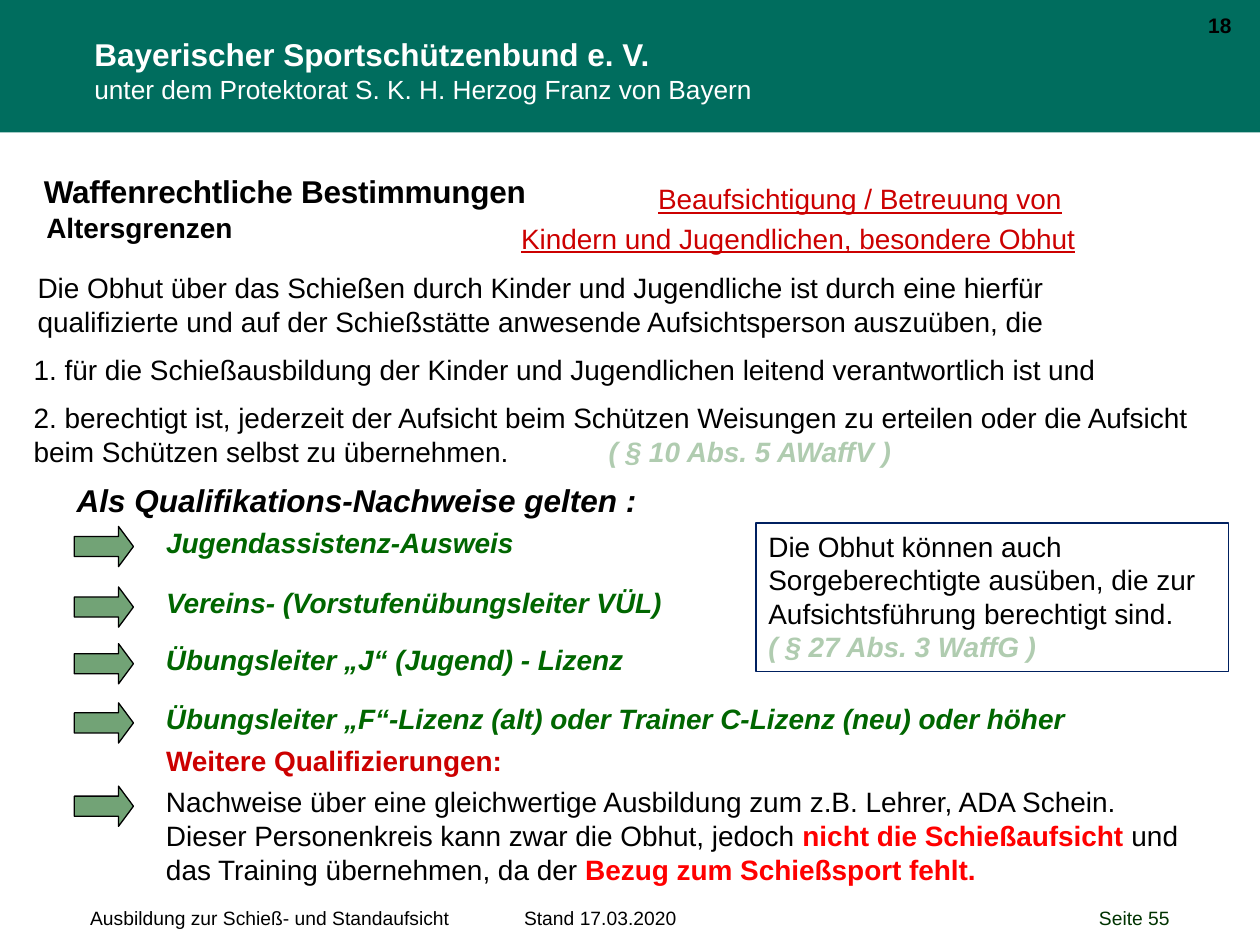
from dataclasses import dataclass
from typing import Any, Optional

import pptx
import pptx.dml.color
import pptx.enum.shapes
import pptx.enum.text
import pptx.oxml
import pptx.oxml.ns
import pptx.util

Pt = pptx.util.Pt
Kind = pptx.enum.shapes.MSO_SHAPE
Align = pptx.enum.text.PP_ALIGN
Anchor = pptx.enum.text.MSO_ANCHOR


@dataclass(frozen=True)
class Theme:
    font: str = "Arial"
    band: str = "006D5E"
    white: str = "FFFFFF"
    black: str = "000000"
    green: str = "006600"
    dark: str = "003300"
    pale: str = "B0CCB0"
    arrow: str = "72A376"
    red: str = "CC0000"
    alert: str = "FF0000"
    navy: str = "002060"
    head: float = 18
    body: float = 16
    sub: float = 15
    page: float = 12
    foot: float = 11


T = Theme()


@dataclass(frozen=True)
class Box:
    left: float
    top: float
    width: float
    height: float

    def points(self) -> list[int]:
        return [Pt(v) for v in (self.left, self.top, self.width, self.height)]


@dataclass(frozen=True)
class Run:
    text: str
    size: float = T.body
    color: str = T.black
    bold: bool = False
    italic: bool = False
    under: bool = False
    track: float = 0


@dataclass(frozen=True)
class Para:
    runs: list[Run]
    indent: float = 0
    before: float = 0
    tabs: tuple[float, ...] = ()


@dataclass(frozen=True)
class Item:
    top: float
    width: float
    height: float
    paras: list[Para]


def rgb(code: str) -> pptx.dml.color.RGBColor:
    return pptx.dml.color.RGBColor.from_string(code)


def shape(host: Any, kind: Any, box: Box, fill: Optional[str] = None,
          line: Optional[str] = None) -> Any:
    item = host.add_shape(kind, *box.points())
    item.shadow.inherit = False
    if fill:
        item.fill.solid()
        item.fill.fore_color.rgb = rgb(fill)
    else:
        item.fill.background()
    if line:
        item.line.color.rgb = rgb(line)
        item.line.width = Pt(0.75)
    else:
        item.line.fill.background()
    return item


def write(item: Any, paras: list[Para], *, align: Any = Align.LEFT,
          anchor: Any = Anchor.TOP, inset: float = 7.2) -> None:
    frame = item.text_frame
    frame.word_wrap = True
    frame.vertical_anchor = anchor
    frame.margin_left = Pt(inset)
    for i, para in enumerate(paras):
        p = frame.add_paragraph() if i else frame.paragraphs[0]
        props = p._p.get_or_add_pPr()
        if para.indent:
            props.set("marL", str(Pt(para.indent)))
        if para.tabs:
            stops = pptx.oxml.parse_xml(
                f'<a:tabLst {pptx.oxml.ns.nsdecls("a")}/>')
            for stop in para.tabs:
                stops.append(pptx.oxml.parse_xml(
                    f'<a:tab {pptx.oxml.ns.nsdecls("a")} '
                    f'pos="{Pt(stop)}" algn="l"/>'))
            props.append(stops)
        p.alignment = align
        if para.before:
            p.space_before = Pt(para.before)
        for run in para.runs:
            r = p.add_run()
            r.text = run.text
            font = r.font
            font.name, font.size = T.font, Pt(run.size)
            font.bold, font.italic = run.bold, run.italic
            font.underline = run.under
            font.color.rgb = rgb(run.color)
            if run.track:
                r._r.get_or_add_rPr().set("spc", str(round(run.track * 100)))


def text(host: Any, box: Box, paras: list[Para], **form: Any) -> None:
    write(host.add_textbox(*box.points()), paras, **form)


def bullet(host: Any, item: Item) -> None:
    group = host.add_group_shape().shapes
    arrow = shape(group, Kind.RIGHT_ARROW, Box(42.5, item.top + 4.2, 33.8, 23),
                  T.arrow, T.black)
    arrow.adjustments[1] = 0.37
    text(group, Box(87.8, item.top, item.width, item.height), item.paras)


def proof(label: str) -> list[Para]:
    return [Para([Run(label, color=T.green, bold=True, italic=True)])]


def law(label: str) -> Run:
    return Run(label, color=T.pale, bold=True, italic=True)


def main() -> None:
    deck = pptx.Presentation()
    deck.slide_width, deck.slide_height = Pt(720), Pt(540)
    host = deck.slides.add_slide(deck.slide_layouts[6]).shapes

    # Footer and header band
    text(host, Box(0, 514.1, 720, 20.9), [Para([
        Run("Ausbildung zur Schieß- und Standaufsicht\tStand 17.03.2020", T.foot),
        Run("\tSeite 55", T.foot, T.dark)], tabs=(248, 576.5))], inset=51.5)
    shape(host, Kind.RECTANGLE, Box(0, 0, 720, 75.6), T.band)
    text(host, Box(46.8, 16.6, 483.8, 47.5), [
        Para([Run("Bayerischer Sportschützenbund e. V.", T.head, T.white, True)]),
        Para([Run("unter dem Protektorat S. K. H. Herzog Franz von Bayern",
                  T.sub, T.white)])])
    text(host, Box(683.3, 3.6, 33.8, 21.6),
         [Para([Run("18", T.page, bold=True)])])

    # Title and topic
    text(host, Box(18, 95, 295.9, 48.2), [
        Para([Run("Waffenrechtliche Bestimmungen", T.head, bold=True, track=-0.15)]),
        Para([Run("Altersgrenzen", bold=True)], indent=1.4)])
    text(host, Box(277.9, 88.6, 356.4, 60.5), [
        Para([Run("Beaufsichtigung / Betreuung von", color=T.red, under=True)],
             indent=70.5),
        Para([Run("Kindern und Jugendlichen, besondere Obhut",
                  color=T.red, under=True)], before=3.3)],
        align=Align.CENTER, anchor=Anchor.BOTTOM)

    # Rules on supervision
    text(host, Box(14.4, 151.2, 596.2, 46.1), [Para([Run(line)]) for line in (
        "Die Obhut über das Schießen durch Kinder und Jugendliche ist durch eine hierfür",
        "qualifizierte und auf der Schießstätte anwesende Aufsichtsperson auszuüben, die")])
    text(host, Box(12.2, 198, 628.6, 26.6), [Para([Run(
        "1. für die Schießausbildung der Kinder und Jugendlichen leitend "
        "verantwortlich ist und")])])
    text(host, Box(12.2, 225.4, 684, 46.1), [Para([
        Run("2. berechtigt ist, jederzeit der Aufsicht beim Schützen Weisungen zu "
            "erteilen oder die Aufsicht beim Schützen selbst zu übernehmen.\t"),
        law("( § 10 Abs. 5 AWaffV )")], tabs=(328.6,))])

    # Accepted proofs
    text(host, Box(36.7, 271.4, 334.8, 28.8), [Para([Run(
        "Als Qualifikations-Nachweise gelten :", T.head, bold=True, italic=True)])])
    text(host, Box(87.8, 421.2, 209.5, 26.6), [Para([Run(
        "Weitere Qualifizierungen:", color=T.red, bold=True)])])
    for item in (
        Item(296.6, 215.3, 26.6, proof("Jugendassistenz-Ausweis")),
        Item(331.2, 301.7, 26.6, proof("Vereins- (Vorstufenübungsleiter VÜL)")),
        Item(363.6, 283.7, 26.6, proof("Übungsleiter „J“ (Jugend) - Lizenz")),
        Item(397.4, 535, 26.6, proof(
            "Übungsleiter „F“-Lizenz (alt) oder Trainer C-Lizenz (neu) oder höher")),
        Item(445, 595.4, 65.5, [
            Para([Run("Nachweise über eine gleichwertige Ausbildung zum z.B. "
                      "Lehrer, ADA Schein.")]),
            Para([Run("Dieser Personenkreis kann zwar die Obhut, jedoch "),
                  Run("nicht die Schießaufsicht", color=T.alert, bold=True),
                  Run(" und das Training übernehmen, da der "),
                  Run("Bezug zum Schießsport fehlt.", color=T.alert, bold=True)])]),
    ):
        bullet(host, item)

    # Note on guardians
    note = shape(host, Kind.RECTANGLE, Box(432, 298.8, 270, 85), line=T.navy)
    write(note, [
        Para([Run("Die Obhut können auch Sorgeberechtigte ausüben, die zur "
                  "Aufsichtsführung berechtigt sind.")]),
        Para([law("( § 27 Abs. 3 WaffG )")])])

    deck.save("out.pptx")


if __name__ == "__main__":
    main()
